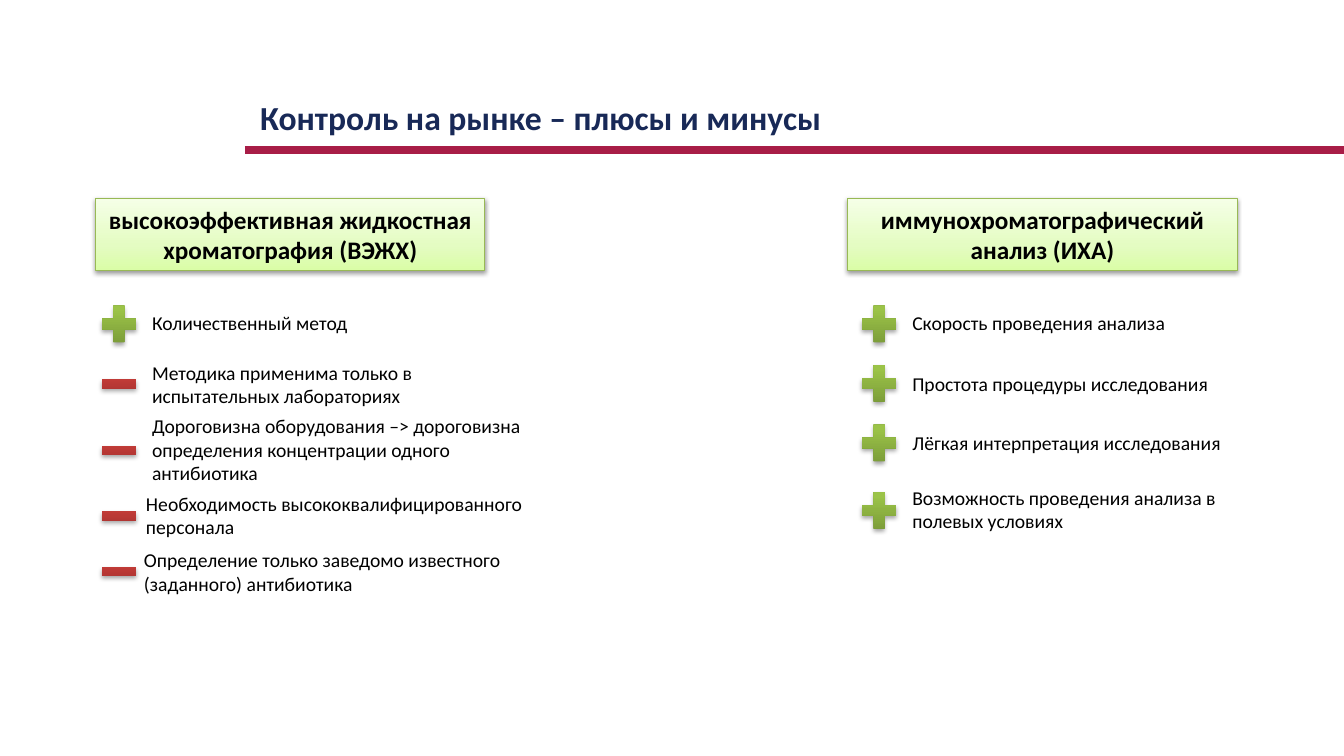
from lxml import etree
from pptx import Presentation
from pptx.dml.color import RGBColor
from pptx.enum.shapes import MSO_CONNECTOR, MSO_SHAPE
from pptx.enum.text import MSO_ANCHOR, MSO_AUTO_SIZE, PP_ALIGN
from pptx.oxml.ns import qn
from pptx.util import Pt

EMU_PER_PX = 9144  # 100 px to the inch
LEFT, CENTER = PP_ALIGN.LEFT, PP_ALIGN.CENTER
TOP, MIDDLE = MSO_ANCHOR.TOP, MSO_ANCHOR.MIDDLE
RECTANGLE = MSO_SHAPE.RECTANGLE
STRAIGHT = MSO_CONNECTOR.STRAIGHT
FIT_TEXT = MSO_AUTO_SIZE.SHAPE_TO_FIT_TEXT
TITLE_ONLY = 5

TITLE_FORMAT = {"name": "Calibri", "size": Pt(24), "bold": True}
HEADING_FORMAT = {"name": "Calibri", "size": Pt(18), "bold": True}
ITEM_FORMAT = {"name": "Calibri", "size": Pt(14), "bold": False}

# Gradient stops run from the bottom of a shape to its top.
HEADING_STOPS = [(0, "DAFDA7"), (35, "E4FCC2"), (100, "F5FFE7")]
PLUS_STOPS = [(0, "779737"), (80, "9BC348"), (100, "9DC746")]
MINUS_STOPS = [(0, "9C2F2D"), (80, "CB3E3A"), (100, "CE3B37")]

MARK_WIDTH = 46
# preset, height, gradient stops
PLUS = (MSO_SHAPE.MATH_PLUS, 49, PLUS_STOPS)
MINUS = (MSO_SHAPE.MATH_MINUS, 36, MINUS_STOPS)

# heading, heading left, marks left, and items:
# mark, mark top, text box (left, top, width, height), wraps, text
COLUMNS = [
    ("высокоэффективная жидкостная хроматография (ВЭЖХ)", 95, 95, [
        (PLUS, 297, (141, 304, 220, 34), False, "Количественный метод"),
        (MINUS, 363, (141, 353, 406, 57), True,
         "Методика применима только в испытательных лабораториях"),
        (MINUS, 429, (141, 406, 416, 81), True,
         "Дороговизна оборудования –> дороговизна определения "
         "концентрации одного антибиотика"),
        (MINUS, 494, (135, 483, 417, 57), True,
         "Необходимость высококвалифицированного персонала"),
        (MINUS, 549, (133, 539, 433, 57), True,
         "Определение только заведомо известного (заданного) антибиотика"),
    ]),
    ("иммунохроматографический анализ (ИХА)", 841, 849, [
        (PLUS, 297, (895, 304, 273, 34), False, "Скорость проведения анализа"),
        (PLUS, 356, (895, 364, 316, 34), False,
         "Простота процедуры исследования"),
        (PLUS, 415, (895, 423, 415, 34), True,
         "Лёгкая интерпретация исследования"),
        (PLUS, 482, (895, 477, 368, 57), True,
         "Возможность проведения анализа в полевых условиях"),
    ]),
]


def px(*lengths):
    return [length * EMU_PER_PX for length in lengths]


def color(hex_string):
    return RGBColor.from_string(hex_string)


def write_text(shape, text, font_format, hex_color="000000",
               alignment=LEFT, anchor=TOP, wraps=True):
    frame = shape.text_frame
    frame.word_wrap = wraps
    frame.auto_size = FIT_TEXT
    frame.vertical_anchor = anchor
    paragraph = frame.paragraphs[0]
    paragraph.alignment = alignment
    run = paragraph.add_run()
    run.text = text
    for name, value in font_format.items():
        setattr(run.font, name, value)
    run.font.color.rgb = color(hex_color)


def add_color_element(parent, hex_color):
    return etree.SubElement(parent, qn("a:srgbClr"), val=hex_color)


def fill_gradient(shape, stops):
    shape.fill.gradient()
    shape.fill.gradient_angle = 90
    stop_list = shape._element.spPr.find(".//" + qn("a:gsLst"))
    for stop in list(stop_list):
        stop_list.remove(stop)
    for percent, hex_color in stops:
        stop = etree.SubElement(stop_list, qn("a:gs"), pos=str(percent * 1000))
        add_color_element(stop, hex_color)


def add_shadow(shape, distance, opacity):
    """Cast a soft black shadow downwards; distance is in EMU."""
    shape.shadow.inherit = False
    effects = shape._element.spPr.find(qn("a:effectLst"))
    shadow = etree.SubElement(
        effects, qn("a:outerShdw"), blurRad="40000", dist=str(distance),
        dir="5400000", rotWithShape="0")
    black = add_color_element(shadow, "000000")
    etree.SubElement(black, qn("a:alpha"), val=str(opacity * 1000))


def add_title(slide, text):
    title = slide.shapes.title
    title.left, title.top, title.width, title.height = px(248, 91, 906, 50)
    write_text(title, text, TITLE_FORMAT, "182957")


def add_title_rule(slide):
    rule = slide.shapes.add_connector(STRAIGHT, *px(243, 149, 1333, 149))
    rule.line.color.rgb = color("A81D47")
    rule.line.width = Pt(6)
    etree.SubElement(rule._element.spPr, qn("a:effectLst"))


def add_heading(slide, left, text):
    heading = slide.shapes.add_shape(RECTANGLE, *px(left, 197, 386, 71))
    fill_gradient(heading, HEADING_STOPS)
    heading.line.color.rgb = color("98B955")
    heading.line.width = Pt(0.75)
    add_shadow(heading, 20000, 38)
    write_text(heading, text, HEADING_FORMAT, alignment=CENTER, anchor=MIDDLE)


def add_mark(slide, mark, left, top):
    preset, height, stops = mark
    shape = slide.shapes.add_shape(preset, *px(left, top, MARK_WIDTH, height))
    fill_gradient(shape, stops)
    shape.line.fill.background()
    add_shadow(shape, 23000, 35)


def add_item_text(slide, box, text, wraps):
    write_text(slide.shapes.add_textbox(*px(*box)), text, ITEM_FORMAT, wraps=wraps)


def main():
    presentation = Presentation()
    presentation.slide_width, presentation.slide_height = px(1333, 750)
    slide = presentation.slides.add_slide(presentation.slide_layouts[TITLE_ONLY])
    add_title_rule(slide)
    add_title(slide, "Контроль на рынке – плюсы и минусы")
    for heading, heading_left, mark_left, items in COLUMNS:
        add_heading(slide, heading_left, heading)
        for mark, mark_top, box, wraps, text in items:
            add_mark(slide, mark, mark_left, mark_top)
            add_item_text(slide, box, text, wraps)
    presentation.save("out.pptx")


if __name__ == "__main__":
    main()
